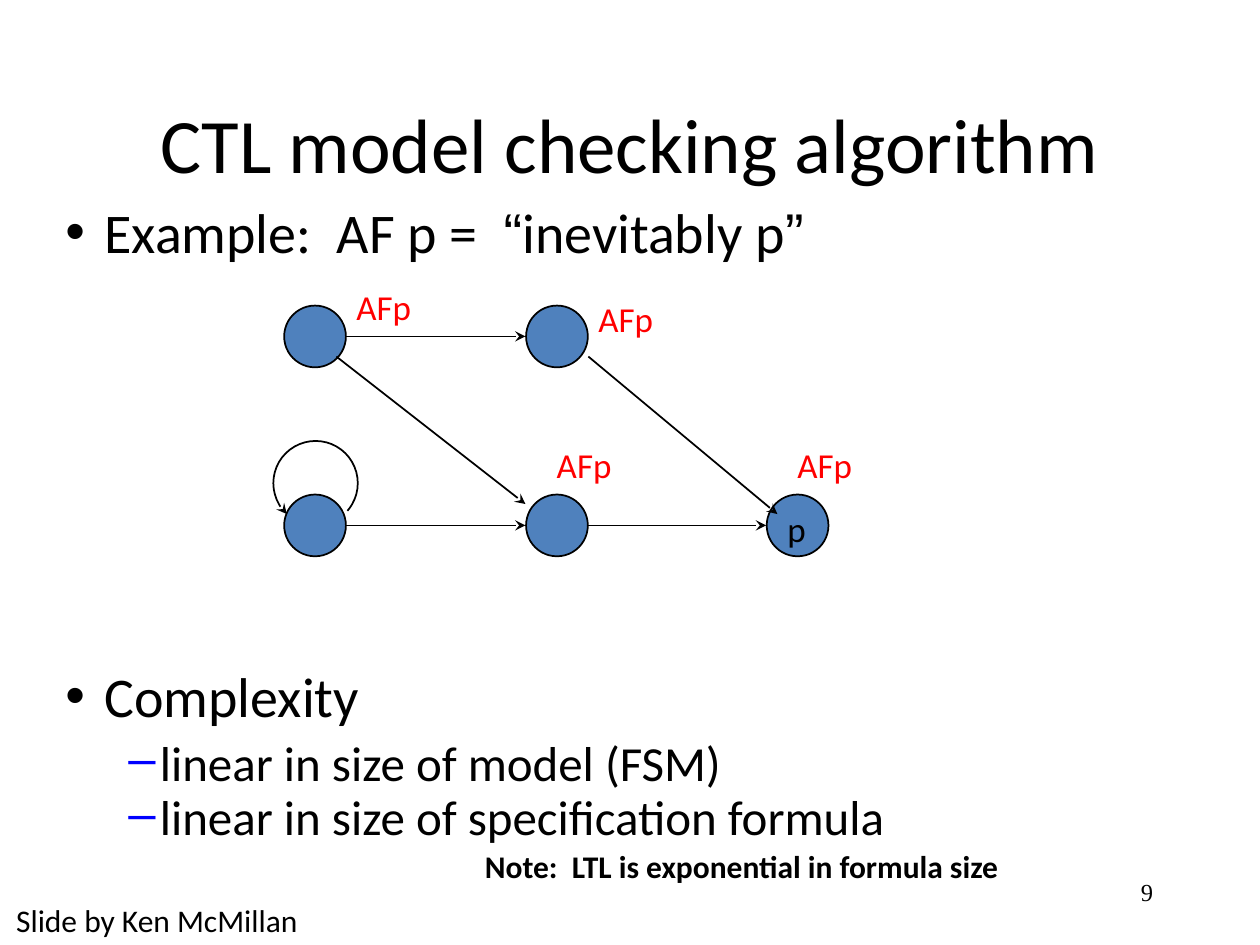
"""Build the slide on the CTL model checking algorithm."""
from lxml import etree
from pptx import Presentation
from pptx import util as u
from pptx.dml import color
from pptx.enum import shapes, text
from pptx.oxml import ns

COLORS = {"ink": "000000", "node": "4F81BD", "label": "FF0000", "dash": "0000FF"}
LEFT, CENTER, RIGHT = text.PP_ALIGN.LEFT, text.PP_ALIGN.CENTER, text.PP_ALIGN.RIGHT
TOP, MIDDLE, BOTTOM = text.MSO_ANCHOR.TOP, text.MSO_ANCHOR.MIDDLE, text.MSO_ANCHOR.BOTTOM

TITLE = "CTL model checking algorithm"
EXAMPLE = [("Example:  AF p =  ", "Calibri"), ("“", "Arial"),
           ("inevitably p", "Calibri"), ("”", "Arial")]
COMPLEXITY = "Complexity"
COSTS = ["linear in size of model (FSM)", "linear in size of specification formula"]
NOTE = "Note:  LTL is exponential in formula size"
CREDIT = "Slide by Ken McMillan"

NODE_SIZE = 0.49
COLUMNS, ROWS = (2.5, 4.42, 6.33), (2.67, 4.17)
NODES = [(0, 0), (1, 0), (2, 1), (1, 1), (0, 1)]
ARROWS = [((2.75, 2.67), (4.17, 2.67)), ((4.67, 2.83), (6.17, 4.08)),
          ((2.67, 2.83), (4.17, 4)), ((2.75, 4.17), (4.17, 4.17)),
          ((4.67, 4.17), (6.08, 4.17))]
LOOP = {"at": (2.17, 3.5, 0.67, 0.67), "angles": (133, 41)}
LABELS = [(6.23, 3.47), (4.32, 3.47), (4.65, 2.31), (2.73, 2.22)]


def rgb(name):
    return color.RGBColor.from_string(COLORS[name])


def inches(values):
    return [u.Inches(value) for value in values]


def assign(target, values):
    for name, value in values.items():
        setattr(target, name, value)


def add_text(page, at, paragraphs, anchor=TOP, wrap=False):
    box = page.shapes.add_textbox(*inches(at))
    frame = box.text_frame
    assign(frame, {"word_wrap": wrap, "vertical_anchor": anchor})
    for index, (spans, size, options) in enumerate(paragraphs):
        para = frame.paragraphs[0] if index == 0 else frame.add_paragraph()
        assign(para, options.get("para", {}))
        if "bullet" in options:
            add_bullet(para, *options["bullet"])
        for words, font in [(spans, "Calibri")] if isinstance(spans, str) else spans:
            span = para.add_run()
            span.text = words
            assign(span.font, {"size": u.Pt(size), "name": options.get("font", font),
                               "bold": options.get("bold", False)})
            span.font.color.rgb = rgb(options.get("color", "ink"))


def add_bullet(para, mark, ink, margin, hang):
    props = para._p.get_or_add_pPr()
    props.set("marL", str(u.Inches(margin)))
    props.set("indent", str(-u.Inches(hang)))
    tint = etree.SubElement(props, ns.qn("a:buClr"))
    etree.SubElement(tint, ns.qn("a:srgbClr"), val=COLORS[ink])
    etree.SubElement(props, ns.qn("a:buFont"), typeface="Arial")
    etree.SubElement(props, ns.qn("a:buChar"), char=mark)


def set_line(shape, arrow=None):
    shape.line.color.rgb = rgb("ink")
    shape.line.width = u.Pt(1)
    if arrow:
        etree.SubElement(shape.line._get_or_add_ln(), ns.qn(arrow), type="stealth")


def add_graph(page):
    half = NODE_SIZE / 2
    for column, row in NODES:
        at = (COLUMNS[column] - half, ROWS[row] - half, NODE_SIZE, NODE_SIZE)
        node = page.shapes.add_shape(shapes.MSO_SHAPE.OVAL, *inches(at))
        node.shadow.inherit = False
        node.fill.solid()
        node.fill.fore_color.rgb = rgb("node")
        set_line(node)
    for start, end in ARROWS:
        arrow = page.shapes.add_connector(
            shapes.MSO_CONNECTOR.STRAIGHT, *inches(start + end))
        set_line(arrow, "a:tailEnd")
        etree.SubElement(arrow._element.spPr, ns.qn("a:effectLst"))
    loop = page.shapes.add_shape(shapes.MSO_SHAPE.ARC, *inches(LOOP["at"]))
    loop.shadow.inherit = False
    loop.fill.background()
    for index, angle in enumerate(LOOP["angles"]):
        loop.adjustments[index] = angle * 0.6
    set_line(loop, "a:headEnd")


def main():
    deck = Presentation()
    assign(deck, {"slide_width": u.Inches(10), "slide_height": u.Inches(7.5)})
    page = deck.slides.add_slide(deck.slide_layouts[6])

    dot = ("•", "ink", 0.31, 0.31)
    dash = ("–", "dash", 0.75, 0.25)
    tight = {"line_spacing": 0.6, "space_before": u.Pt(3), "space_after": u.Pt(8)}
    heading = {"bullet": dot, "para": {"space_after": u.Pt(11)}}
    costs = [(cost, 28, {"bullet": dash, "para": tight}) for cost in COSTS]

    add_text(page, (7.17, 6.83, 2.08, 0.5),
             [("9", 14, {"font": "Times New Roman", "para": {"alignment": RIGHT}})], MIDDLE)
    add_text(page, (0.5, 0.3, 9, 1.25),
             [(TITLE, 44, {"para": {"alignment": CENTER}})], BOTTOM, True)
    add_text(page, (0.42, 1.52, 9.08, 0.65), [(EXAMPLE, 32, {"bullet": dot})], wrap=True)
    add_text(page, (0.42, 5.2, 9.08, 1.63),
             [(COMPLEXITY, 32, heading)] + costs, wrap=True)
    add_graph(page)
    add_text(page, (6.15, 3.98, 0.35, 0.43), [("p", 20, {})])
    add_text(page, (3.75, 6.67, 5.22, 0.4), [(NOTE, 18, {"bold": True})])
    for spot in LABELS:
        add_text(page, spot + (0.72, 0.43), [("AFp", 20, {"color": "label"})])
    add_text(page, (0.03, 7.1, 2.47, 0.4), [(CREDIT, 18, {})])
    deck.save("out.pptx")


if __name__ == "__main__":
    main()
